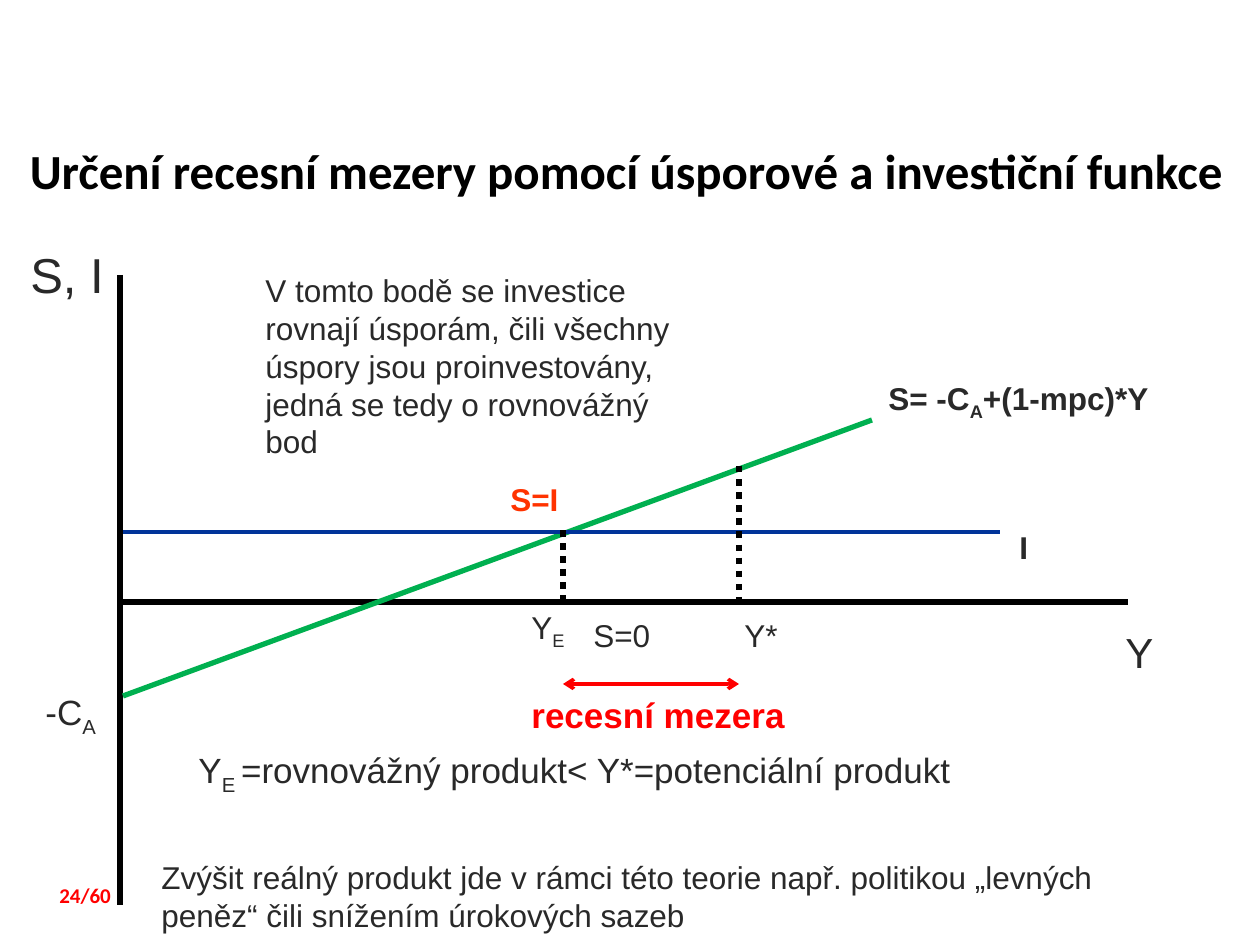
"""Build the slide on the recessionary gap with the saving and investment functions."""
from lxml.etree import SubElement
from pptx import Presentation
from pptx.dml.color import RGBColor
from pptx.enum.dml import MSO_LINE
from pptx.enum.shapes import MSO_CONNECTOR
from pptx.enum.text import MSO_ANCHOR, PP_ALIGN
from pptx.oxml.ns import qn
from pptx.util import Pt

PX = 914400 / 126
BLACK, GREY, RED = "000000", "292929", "FF0000"
ORANGE, GREEN, BLUE = "FF3300", "00B050", "003399"


def color(value):
    return RGBColor.from_string(value)


def add_text(box, runs, size, fill=GREY, bold=False, font="Arial"):
    shape = slide.shapes.add_textbox(*[round(length * PX) for length in box])
    shape.text_frame.word_wrap = True
    paragraph = shape.text_frame.paragraphs[0]
    for index, text in enumerate(runs):
        run = paragraph.add_run()
        run.text = text
        run.font.name = font
        run.font.size = Pt(size)
        run.font.bold = bold
        run.font.color.rgb = color(fill)
        if index % 2:
            run.font._element.set("baseline", "-25000")
    return shape


presentation = Presentation()
presentation.slide_width = round(1260 * PX)
presentation.slide_height = round(945 * PX)
slide = presentation.slides.add_slide(presentation.slide_layouts[6])

title = add_text((0, 72, 1252, 195), ["Určení recesní mezery pomocí úsporové a investiční funkce"],
                 28, BLACK, True, "Calibri")
title.text_frame.vertical_anchor = MSO_ANCHOR.MIDDLE
title.text_frame.paragraphs[0].alignment = PP_ALIGN.CENTER

axis_x, axis_y, investment_y = 120, 602, 532
equilibrium_x, potential_x, gap_y = 563, 739, 684
lines = [
    ((axis_x, 275, axis_x, 905), BLACK, 3.5, None, False),
    ((123, axis_y, 1128, axis_y), BLACK, 3.5, None, False),
    ((123, 696, 872, 420), GREEN, 3, None, False),
    ((123, investment_y, 1000, investment_y), BLUE, 2.75, None, False),
    ((equilibrium_x, 530, equilibrium_x, 600), BLACK, 3.75, MSO_LINE.ROUND_DOT, False),
    ((potential_x, 466, potential_x, 600), BLACK, 3.75, MSO_LINE.ROUND_DOT, False),
    ((potential_x, gap_y, equilibrium_x, gap_y), RED, 2, None, True),
]
for points, stroke, width, dash, arrows in lines:
    connector = slide.shapes.add_connector(
        MSO_CONNECTOR.STRAIGHT, *[round(point * PX) for point in points])
    connector.line.color.rgb = color(stroke)
    connector.line.width = Pt(width)
    if dash:
        connector.line.dash_style = dash
    properties = connector._element.spPr
    if arrows:
        for end in ("a:headEnd", "a:tailEnd"):
            SubElement(properties.find(qn("a:ln")), qn(end), type="arrow")
    SubElement(properties, qn("a:effectLst"))

labels = [
    ((1113, 620, 108, 64), ["Y"], 24, GREY, False),
    ((18, 238, 118, 72), ["S, I"], 28, GREY, False),
    ((876, 373, 384, 88), ["S= -C", "A", "+(1-mpc)*Y"], 18, GREY, True),
    ((33, 684, 88, 55), ["-C", "A"], 20, GREY, False),
    ((253, 265, 452, 202), ["V tomto bodě se investice rovnají úsporám, čili všechny úspory "
                            "jsou proinvestovány, jedná se tedy o rovnovážný bod"], 18, GREY, False),
    ((581, 610, 88, 50), ["S=0"], 18, GREY, False),
    ((149, 852, 1042, 89), ["Zvýšit reálný produkt jde v rámci této teorie např. politikou "
                            "„levných peněz“ čili snížením úrokových sazeb"], 18, GREY, False),
    ((498, 474, 188, 50), ["S=I"], 18, ORANGE, True),
    ((1007, 522, 88, 50), ["I"], 18, GREY, True),
    ((186, 742, 814, 55), ["Y", "E ", "=rovnovážný produkt< Y*=potenciální produkt"], 20, GREY, False),
    ((519, 602, 88, 50), ["Y", "E"], 18, GREY, False),
    ((732, 610, 88, 50), ["Y*"], 18, GREY, False),
    ((519, 687, 533, 55), ["recesní mezera"], 20, RED, True),
]
for label in labels:
    add_text(*label)

add_text((47, 876, 116, 38), ["24/60"], 12, RED, True, "Calibri")

presentation.save("out.pptx")
